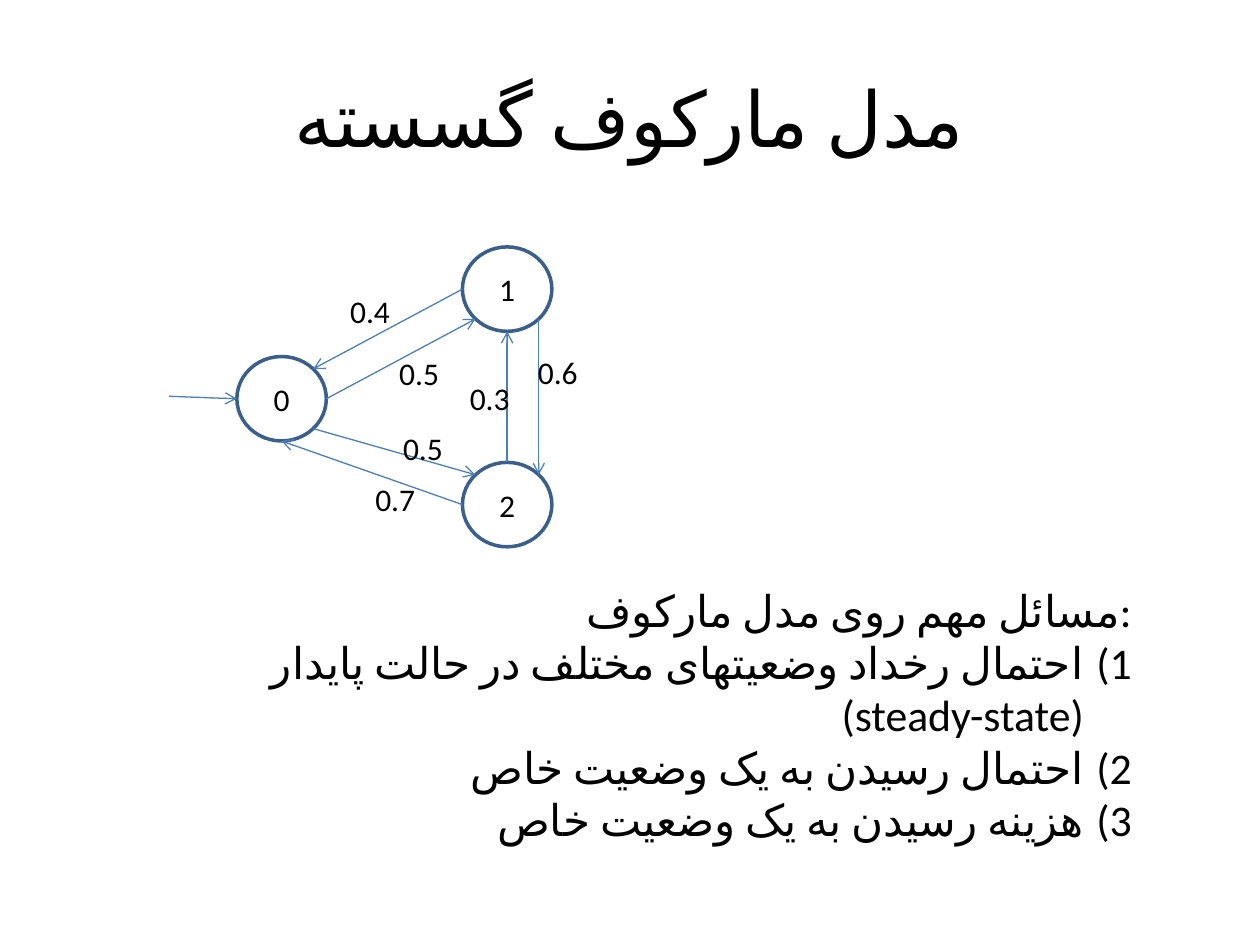
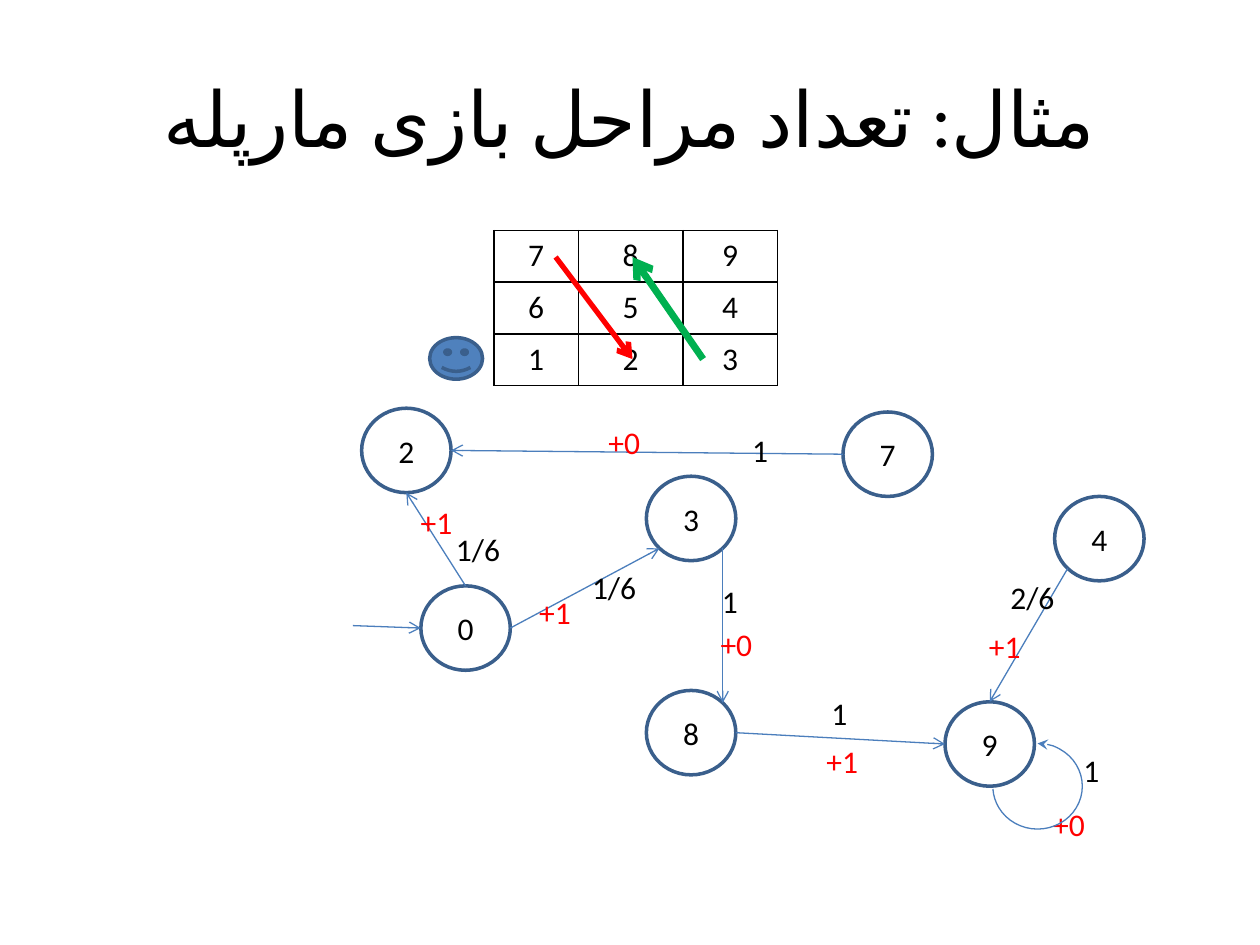
from math import cos, radians, sin

from lxml.etree import SubElement
from pptx import Presentation
from pptx.dml.color import RGBColor as RGB
from pptx.enum.shapes import MSO_CONNECTOR as LINE, MSO_SHAPE as SHAPE
from pptx.enum.text import MSO_ANCHOR as ANCHOR, PP_ALIGN as ALIGN
from pptx.oxml.ns import qn
from pptx.util import Inches, Pt


class Theme:
    font, lang = "Calibri", "fa-IR"
    black, red, green = "000000", "FF0000", "00B050"
    ring, edge, face = "3A5F8C", "4B7EBC", "4F81BD"
    title, text, body = 44, 18, 25
    ring_w, edge_w, grid_w = 2, 0.75, 1


NODE_W, NODE_H = 0.71, 0.67
SITES = {"right": 0, "low right": 45, "bottom": 90, "low left": 135,
         "left": 180, "top left": 225, "top": 270, "top right": 315}

# Nodes give left and top; edges give node, site, node, site;
# labels give text, left, top. Labels starting with + are costs.
MARKOV = {
    "title": "مدل مارکوف گسسته",
    "nodes": {"0": (1.88, 2.83), "1": (3.67, 1.96), "2": (3.67, 3.67)},
    "edges": [
        ("0", "right", "1", "low left"),
        ("1", "left", "0", "top right"),
        ("0", "low right", "2", "top left"),
        ("2", "left", "0", "bottom"),
        ("2", "top", "1", "bottom"),
        ("1", "low right", "2", "top right"),
    ],
    "labels": [("0.4", 2.68, 2.27), ("0.5", 3.07, 2.76), ("0.3", 3.63, 2.96),
               ("0.6", 4.17, 2.75), ("0.5", 3.1, 3.36), ("0.7", 2.88, 3.76)],
}
TASKS = [
    "مسائل مهم روی مدل مارکوف:",
    "احتمال رخداد وضعیتهای مختلف در حالت پایدار (steady-state)",
    "احتمال رسیدن به یک وضعیت خاص",
    "هزینه رسیدن به یک وضعیت خاص",
]
GAME = {
    "title": "مثال: تعداد مراحل بازی مارپله",
    "nodes": {"8": (5.13, 5.48), "3": (5.13, 3.78), "0": (3.34, 4.65),
              "9": (7.5, 5.57), "7": (6.69, 3.27), "2": (2.87, 3.24),
              "4": (8.37, 3.94)},
    "edges": [
        ("0", "right", "3", "low left"),
        ("3", "low right", "8", "top right"),
        ("8", "right", "9", "left"),
        ("0", "top", "2", "bottom"),
        ("7", "left", "2", "right"),
        ("4", "low left", "9", "top"),
    ],
    "labels": [("1/6", 4.6, 4.46), ("+1", 4.18, 4.66),
               ("1", 5.63, 4.57), ("+0", 5.62, 4.91),
               ("1", 6.5, 5.46), ("+1", 6.46, 5.84),
               ("1", 8.5, 5.91), ("+0", 8.26, 6.34),
               ("1/6", 3.52, 4.16), ("+1", 3.24, 3.94),
               ("1", 5.87, 3.37), ("+0", 4.73, 3.31),
               ("2/6", 7.92, 4.54), ("+1", 7.75, 4.93)],
}
BOARD = ["789", "654", "123"]
BOARD_AT, COLS, ROW_H = (3.92, 1.83), (0.67, 0.83, 0.75), 0.41
JUMPS = [((5.58, 2.85), (5.02, 2.04), Theme.green, 4),
         ((4.41, 2.04), (5.02, 2.85), Theme.red, 3)]


def box(*nums):
    return [Inches(n) for n in nums]


def put(item, **values):
    for name, value in values.items():
        setattr(item, name, value)


def write(para, text, size=Theme.text, color=Theme.black, align=ALIGN.CENTER,
          persian=False):
    para.alignment = align
    run = para.add_run()
    run.text = text
    put(run.font, name=Theme.font, size=Pt(size), bold=False)
    run.font.color.rgb = RGB.from_string(color)
    if persian:
        props = run._r.get_or_add_rPr()
        props.set("lang", Theme.lang)
        SubElement(props, qn("a:cs"), typeface=Theme.font)


def add_text(slide, at, text, wrap=True, anchor=ANCHOR.TOP, **style):
    frame = slide.shapes.add_textbox(*box(*at)).text_frame
    put(frame, word_wrap=wrap, vertical_anchor=anchor)
    write(frame.paragraphs[0], text, **style)
    return frame


def stroke(item, color, width, **ends):
    """Style an outline; ends may name headEnd and tailEnd arrowheads."""
    item.line.color.rgb = RGB.from_string(color)
    item.line.width = Pt(width)
    for end, kind in ends.items():
        SubElement(item.line._get_or_add_ln(), qn(f"a:{end}"), type=kind)


def arrow(slide, start, stop, color=Theme.edge, width=Theme.edge_w):
    link = slide.shapes.add_connector(LINE.STRAIGHT, *box(*start, *stop))
    stroke(link, color, width, tailEnd="arrow")
    SubElement(link._element.spPr, qn("a:effectLst"))


def shape(slide, kind, at, color=Theme.ring, width=Theme.ring_w,
          fill=None, **ends):
    item = slide.shapes.add_shape(kind, *box(*at))
    item.shadow.inherit = False
    if fill:
        item.fill.solid()
        item.fill.fore_color.rgb = RGB.from_string(fill)
    else:
        item.fill.background()
    stroke(item, color, width, **ends)
    return item


def site(at, name):
    """Point on the rim of the node at the given corner."""
    turn = radians(SITES[name])
    return (at[0] + NODE_W / 2 * (1 + cos(turn)),
            at[1] + NODE_H / 2 * (1 + sin(turn)))


def graph(slide, data):
    nodes = data["nodes"]
    add_text(slide, (0.5, 0.3, 9, 1.25), data["title"], size=Theme.title,
             anchor=ANCHOR.MIDDLE, persian=True)
    for name, at in nodes.items():
        ring = shape(slide, SHAPE.OVAL, (*at, NODE_W, NODE_H))
        ring.text_frame.vertical_anchor = ANCHOR.MIDDLE
        write(ring.text_frame.paragraphs[0], name)
    for one, out, two, into in data["edges"]:
        arrow(slide, site(nodes[one], out), site(nodes[two], into))
    x, y = site(nodes["0"], "left")
    arrow(slide, (x - 0.54, y - 0.02), (x, y))
    for text, left, top in data["labels"]:
        color = Theme.red if text.startswith("+") else Theme.black
        add_text(slide, (left, top, 0.55, 0.4), text, wrap=False,
                 color=color, align=ALIGN.LEFT)


def tasks(slide):
    style = dict(size=Theme.body, align=ALIGN.RIGHT, persian=True)
    frame = add_text(slide, (0.98, 4.58, 8.1, 1.78), TASKS[0], **style)
    indent = Inches(0.38)
    for text in TASKS[1:]:
        para = frame.add_paragraph()
        props = para._p.get_or_add_pPr()
        for key, value in dict(marR=0, marL=indent, indent=-indent,
                               rtl=1).items():
            props.set(key, str(value))
        SubElement(props, qn("a:buFont"), typeface="+mj-lt")
        SubElement(props, qn("a:buAutoNum"), type="arabicParenR")
        write(para, text, **style)


def rule(cell):
    props = cell._tc.get_or_add_tcPr()
    for n, side in enumerate(("lnL", "lnR", "lnT", "lnB")):
        line = props.makeelement(qn(f"a:{side}"), w=str(Pt(Theme.grid_w)))
        fill = SubElement(line, qn("a:solidFill"))
        SubElement(fill, qn("a:srgbClr"), val=Theme.black)
        props.insert(n, line)


def board(slide):
    rows = len(BOARD)
    table = slide.shapes.add_table(
        rows, len(COLS), *box(*BOARD_AT, sum(COLS), ROW_H * rows)).table
    put(table, first_row=False, horz_banding=False)
    for col, width in zip(table.columns, COLS):
        col.width = Inches(width)
    for row, marks in zip(table.rows, BOARD):
        row.height = Inches(ROW_H)
        for cell, mark in zip(row.cells, marks):
            cell.fill.background()
            rule(cell)
            write(cell.text_frame.paragraphs[0], mark)
    shape(slide, SHAPE.SMILEY_FACE, (3.41, 2.68, 0.42, 0.33), fill=Theme.face)
    for jump in JUMPS:
        arrow(slide, *jump)


def loop(slide):
    """Arrow from the last state back to itself."""
    arc = shape(slide, SHAPE.ARC, (7.88, 5.9, 0.71, 0.68), Theme.edge,
                Theme.edge_w, headEnd="stealth")
    for n, turn in enumerate((162, 105.87)):
        arc.adjustments[n] = turn


def main():
    deck = Presentation()
    put(deck, slide_width=Inches(10), slide_height=Inches(7.5))
    for data, parts in ((MARKOV, [tasks]), (GAME, [board, loop])):
        slide = deck.slides.add_slide(deck.slide_layouts[6])
        graph(slide, data)
        for part in parts:
            part(slide)
    deck.save("out.pptx")


if __name__ == "__main__":
    main()
